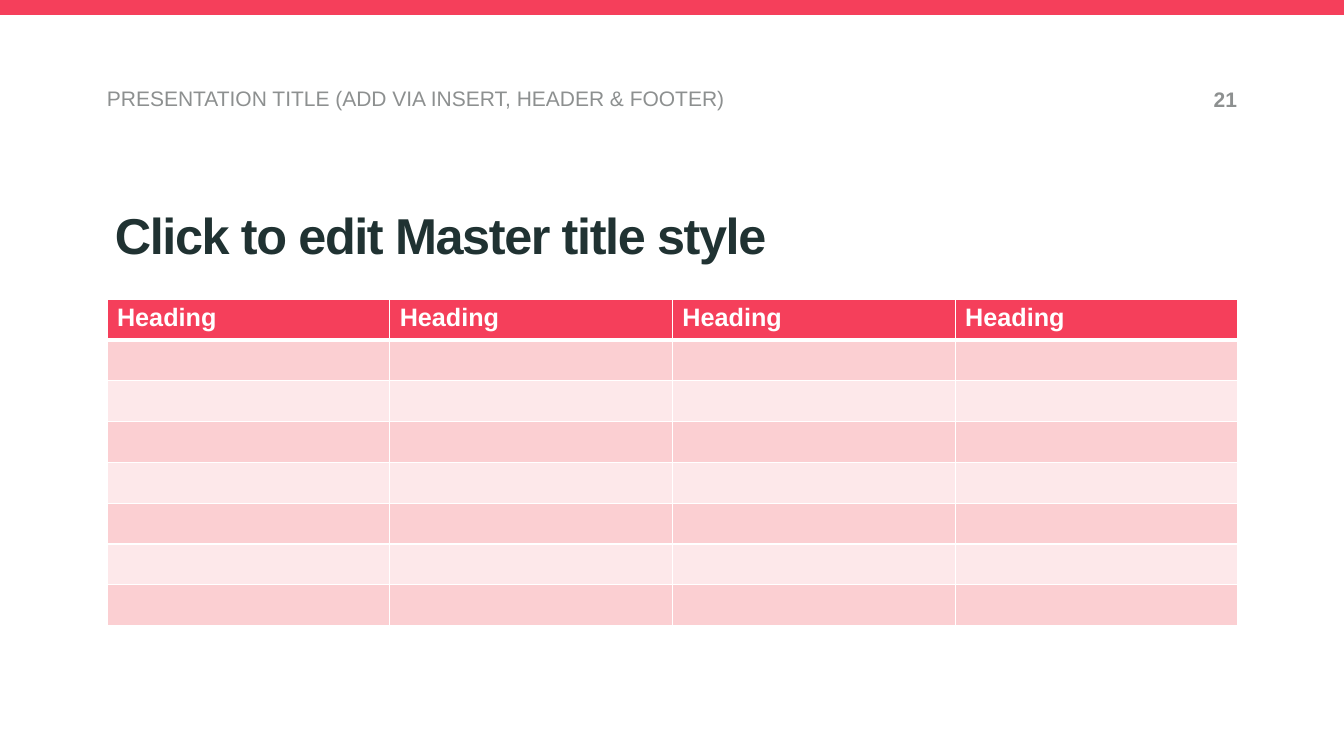
from dataclasses import dataclass

from lxml import etree
from pptx import Presentation
from pptx import util as u
from pptx.dml.color import RGBColor
from pptx.enum import shapes, text
from pptx.oxml import ns

EMU_PER_PX = 914400 / 100.8
FONT = "Arial"
COLORS = {
    "accent": "F53F5B",
    "title": "203232",
    "muted": "8D9090",
    "white": "FFFFFF",
    "band_dark": "FBCFD2",
    "band_light": "FDE8EA",
}
HEADINGS = ["Heading"] * 4
BODY_ROWS = 7


@dataclass(frozen=True)
class Box:
    left: int
    top: int
    width: int
    height: int

    def emu(self) -> list[u.Emu]:
        return [px(v) for v in (self.left, self.top, self.width, self.height)]


@dataclass(frozen=True)
class Label:
    box: Box
    content: str
    size: int
    color: str
    bold: bool = False
    align: text.PP_ALIGN = text.PP_ALIGN.LEFT
    inset: bool = False
    line_pt: int | None = None
    spacing: int = 0


LABELS = [
    Label(Box(105, 209, 1133, 40), "Click to edit Master title style", 36, "title",
          bold=True, inset=True, line_pt=36, spacing=-100),
    Label(Box(107, 86, 791, 25), "PRESENTATION TITLE (ADD VIA INSERT, HEADER & FOOTER)",
          15, "muted"),
    Label(Box(1083, 87, 154, 25), "21", 15, "muted", bold=True, align=text.PP_ALIGN.RIGHT),
]


def px(value: int) -> u.Emu:
    return u.Emu(round(value * EMU_PER_PX))


def rgb(name: str) -> RGBColor:
    return RGBColor.from_string(COLORS[name])


def style_run(r, size: int, color: str, bold: bool) -> None:
    r.font.name = FONT
    r.font.size = u.Pt(size)
    r.font.bold = bold
    r.font.color.rgb = rgb(color)


def add_bar(s, box: Box) -> None:
    sp = s.shapes.add_shape(shapes.MSO_SHAPE.RECTANGLE, *box.emu())
    sp.shadow.inherit = False
    sp.fill.solid()
    sp.fill.fore_color.rgb = rgb("accent")
    sp.line.fill.background()


def add_label(s, label: Label) -> None:
    tf = s.shapes.add_textbox(*label.box.emu()).text_frame
    tf.word_wrap = True
    if not label.inset:
        tf.margin_left = tf.margin_right = tf.margin_top = tf.margin_bottom = 0
    tf.text = label.content
    p = tf.paragraphs[0]
    p.alignment = label.align
    if label.line_pt:
        p.line_spacing = u.Pt(label.line_pt)
    r = p.runs[0]
    style_run(r, label.size, label.color, label.bold)
    if label.spacing:
        r.font._element.set("spc", str(label.spacing))


def set_borders(cell, top: int, bottom: int) -> None:
    tc_pr = cell._tc.get_or_add_tcPr()
    for side, points in (("L", 1), ("R", 1), ("T", top), ("B", bottom)):
        ln = etree.SubElement(tc_pr, ns.qn(f"a:ln{side}"), w=str(u.Pt(points)))
        fill = etree.SubElement(ln, ns.qn("a:solidFill"))
        etree.SubElement(fill, ns.qn("a:srgbClr"), val=COLORS["white"])


def row_color(row: int) -> str:
    if row == 0:
        return "accent"
    return "band_dark" if row % 2 else "band_light"


def add_heading_table(s, box: Box) -> None:
    table = s.shapes.add_table(BODY_ROWS + 1, len(HEADINGS), *box.emu()).table
    for i, row in enumerate(table.rows):
        for cell in row.cells:
            set_borders(cell, top=3 if i == 1 else 1, bottom=3 if i == 0 else 1)
            cell.fill.solid()
            cell.fill.fore_color.rgb = rgb(row_color(i))
    for cell, heading in zip(table.rows[0].cells, HEADINGS):
        cell.text_frame.text = heading
        style_run(cell.text_frame.paragraphs[0].runs[0], 18, "white", True)


def main() -> None:
    prs = Presentation()
    prs.slide_width, prs.slide_height = px(1344), px(756)
    s = prs.slides.add_slide(prs.slide_layouts[6])
    add_bar(s, Box(0, 0, 1344, 15))
    for label in LABELS:
        add_label(s, label)
    add_heading_table(s, Box(107, 299, 1131, 327))
    prs.save("out.pptx")


if __name__ == "__main__":
    main()
